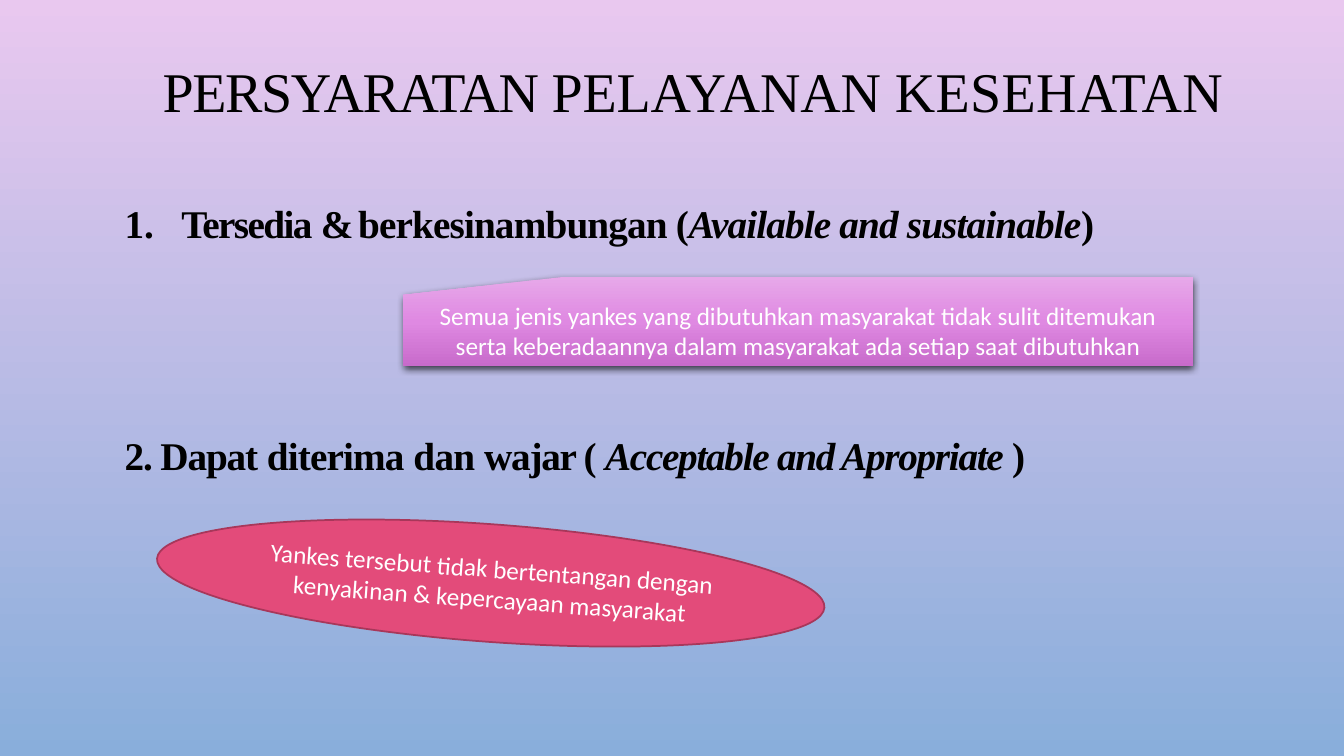
from copy import deepcopy

from lxml.etree import SubElement
from pptx import Presentation
from pptx.dml.color import RGBColor
from pptx.enum.shapes import MSO_SHAPE
from pptx.enum.text import MSO_ANCHOR, PP_ALIGN
from pptx.oxml.ns import qn
from pptx.util import Pt

BLACK = RGBColor(0x00, 0x00, 0x00)
WHITE = RGBColor(0xFF, 0xFF, 0xFF)
SKY_TOP = RGBColor(0xE9, 0xC8, 0xEF)
SKY_BOTTOM = RGBColor(0x89, 0xAE, 0xDB)
ORCHID_LIGHT = RGBColor(0xE7, 0xA8, 0xE9)
ORCHID = RGBColor(0xDF, 0x89, 0xE2)
ORCHID_DARK = RGBColor(0xC8, 0x6B, 0xCB)
ROSE = RGBColor(0xE3, 0x4B, 0x7A)
ROSE_DARK = RGBColor(0xA8, 0x37, 0x5A)
SERIF = "Times New Roman"
SANS = "Calibri"


def fill_downward(fill, colors, element):
    fill.gradient()
    fill.gradient_angle = 270
    stop_list = next(element.iter(qn("a:gsLst")))
    while len(stop_list) < len(colors):
        stop_list.append(deepcopy(stop_list[0]))
    for index, (stop, color) in enumerate(zip(fill.gradient_stops, colors)):
        stop.position = index / (len(colors) - 1)
        stop.color.rgb = color


def place(placeholder, box, top_inset):
    placeholder.left, placeholder.top, placeholder.width, placeholder.height = map(Pt, box)
    frame = placeholder.text_frame
    frame.margin_left = frame.margin_right = frame.margin_bottom = 0
    frame.margin_top = Pt(top_inset)
    frame.word_wrap = True
    return frame


def add_spaced_runs(paragraph, pieces):
    for words, spacing, italic in pieces:
        run = paragraph.add_run()
        run.text = words
        if italic:
            run.font.italic = True
        run.font._element.set("spc", str(round(spacing * 100)))


def set_font(paragraph, name, size, color, bold=False):
    paragraph.font.name = name
    paragraph.font.size = Pt(size)
    paragraph.font.color.rgb = color
    paragraph.font.bold = bold


def build_title(title, box):
    frame = place(title, box, 1)
    frame.vertical_anchor = MSO_ANCHOR.MIDDLE
    heading = frame.paragraphs[0]
    heading.alignment = PP_ALIGN.CENTER
    add_spaced_runs(heading, [
        ("PERSYARATAN ", -1, False),
        ("PELAYANAN ", -0.1, False),
        ("KESEHATAN", 0.3, False),
    ])
    set_font(heading, SERIF, 40, BLACK)


def build_requirements(body, box):
    frame = place(body, box, 8)
    frame.vertical_anchor = MSO_ANCHOR.TOP
    available = frame.paragraphs[0]
    acceptable = frame.add_paragraph()
    add_spaced_runs(available, [
        ("Tersedia ", -1.1, False),
        ("& ", -3.6, False),
        ("berkesinambungan (", -0.6, False),
        ("Available and sustainable", -0.6, True),
        (")", -0.6, False),
    ])
    add_spaced_runs(acceptable, [
        ("2. Dapat ", -0.8, False),
        ("diterima ", -0.6, False),
        ("dan ", -0.5, False),
        ("wajar ( ", -0.9, False),
        ("Acceptable and Apropriate ", -0.9, True),
        (")", -0.9, False),
    ])
    for requirement, margin, hanging, gap, bullet in (
        (available, 41, 40.5, 0, "a:buAutoNum"),
        (acceptable, 0.5, 0, 132, "a:buNone"),
    ):
        properties = requirement._p.get_or_add_pPr()
        properties.set("marL", str(Pt(margin)))
        properties.set("indent", str(-Pt(hanging)))
        marker = SubElement(properties, qn(bullet))
        if requirement is available:
            marker.set("type", "arabicPeriod")
        requirement.space_before = Pt(gap)
        set_font(requirement, SERIF, 28, BLACK, bold=True)


def add_callout(slide, preset, box, words):
    callout = slide.shapes.add_shape(preset, *map(Pt, box))
    callout.shadow.inherit = False
    frame = callout.text_frame
    frame.word_wrap = True
    frame.vertical_anchor = MSO_ANCHOR.MIDDLE
    explanation = frame.paragraphs[0]
    explanation.text = words
    explanation.alignment = PP_ALIGN.CENTER
    set_font(explanation, SANS, 18, WHITE)
    return callout


def build_availability_card(slide, box):
    card = add_callout(
        slide, MSO_SHAPE.FLOWCHART_CARD, box,
        "Semua jenis yankes yang dibutuhkan masyarakat tidak sulit ditemukan "
        "serta keberadaannya dalam masyarakat ada setiap saat dibutuhkan")
    fill_downward(card.fill, [ORCHID_LIGHT, ORCHID, ORCHID_DARK], card._element)
    card.line.fill.background()
    effects = card._element.spPr.find(qn("a:effectLst"))
    shadow = SubElement(effects, qn("a:outerShdw"), blurRad=str(Pt(5)), dist=str(Pt(2)),
                        dir="5400000", algn="ctr", rotWithShape="0")
    tint = SubElement(shadow, qn("a:srgbClr"), val=str(BLACK))
    SubElement(tint, qn("a:alpha"), val="69000")


def build_acceptance_oval(slide, box):
    oval = add_callout(
        slide, MSO_SHAPE.OVAL, box,
        "Yankes tersebut tidak bertentangan dengan kenyakinan & kepercayaan masyarakat")
    oval.rotation = 4.2
    oval.fill.solid()
    oval.fill.fore_color.rgb = ROSE
    oval.line.color.rgb = ROSE_DARK
    oval.line.width = Pt(1.25)


def main():
    deck = Presentation()
    deck.slide_width, deck.slide_height = Pt(960), Pt(540)
    slide = deck.slides.add_slide(deck.slide_layouts[1])
    fill_downward(slide.background.fill, [SKY_TOP, SKY_BOTTOM], slide._element)
    build_title(slide.shapes.title, (72, 39, 846, 50))
    build_requirements(slide.placeholders[1], (88.5, 134.5, 745, 291))
    build_availability_card(slide, (288, 198, 564, 63.5))
    build_acceptance_oval(slide, (111.5, 374.5, 478, 84))
    deck.save("out.pptx")


if __name__ == "__main__":
    main()
